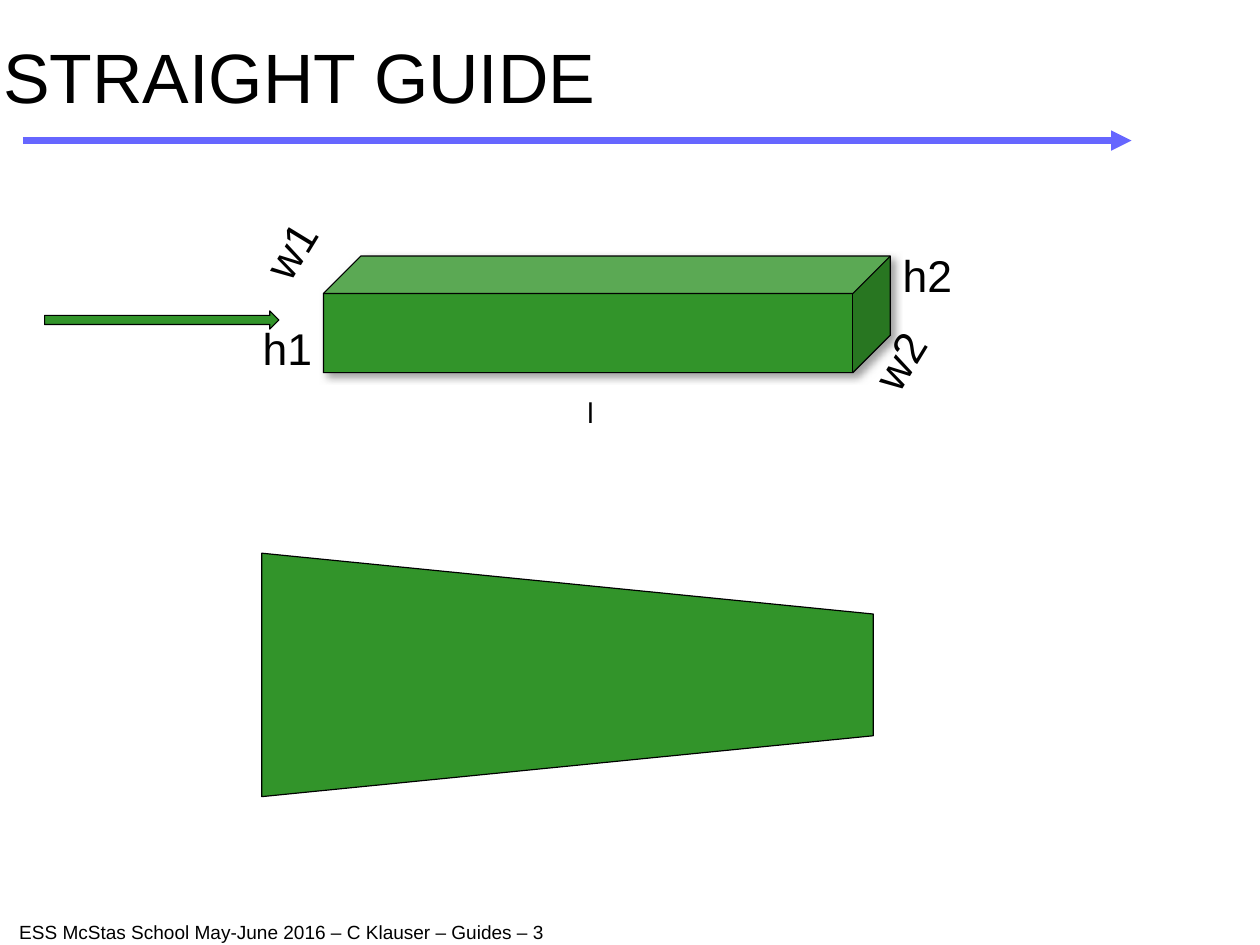
import pptx
import pptx.dml.color
import pptx.enum.shapes
import pptx.enum.text
import pptx.oxml
import pptx.oxml.ns
import pptx.util
from dataclasses import dataclass

Inches = pptx.util.Inches
Pt = pptx.util.Pt
Kind = pptx.enum.shapes.MSO_SHAPE
Anchor = pptx.enum.text.MSO_ANCHOR
DRAW = pptx.oxml.ns.nsdecls("a")


@dataclass(frozen=True)
class Theme:
    font: str = "Arial"
    ink: str = "000000"
    green: str = "32942A"
    rule: str = "6666FF"
    shade: str = "808080"
    title: int = 44
    label: int = 28
    small: int = 18
    foot: int = 12
    edge: float = 0.75
    bar: float = 4.31


THEME = Theme()


def color(code):
    return pptx.dml.color.RGBColor.from_string(code)


def add_text(slide, box, text, size, wrap=False, pad=(0.1, 0.05), space=0.93, turn=0):
    shape = slide.shapes.add_textbox(*map(Inches, box))
    shape.rotation = turn
    frame = shape.text_frame
    frame.word_wrap = wrap
    frame.margin_left = frame.margin_right = Inches(pad[0])
    frame.margin_top = frame.margin_bottom = Inches(pad[1])
    para = frame.paragraphs[0]
    para.text = text
    para.line_spacing = space
    para.font.name = THEME.font
    para.font.size = Pt(size)
    para.font.color.rgb = color(THEME.ink)
    return frame


def add_solid(slide, kind, box):
    """Add a green preset shape with a thin dark edge."""
    shape = slide.shapes.add_shape(kind, *map(Inches, box))
    shape.shadow.inherit = False
    shape.fill.solid()
    shape.fill.fore_color.rgb = color(THEME.green)
    shape.line.color.rgb = color(THEME.ink)
    shape.line.width = Pt(THEME.edge)
    return shape


def add_shade(shape):
    """Cast a soft shadow to the lower right."""
    effects = shape._element.spPr.find(pptx.oxml.ns.qn("a:effectLst"))
    effects.append(pptx.oxml.parse_xml(
        f'<a:outerShdw {DRAW} blurRad="{Pt(5)}" dist="{Pt(3)}" dir="2700000">'
        f'<a:srgbClr val="{THEME.shade}"><a:alpha val="75000"/></a:srgbClr>'
        '</a:outerShdw>'))


def add_header(slide, left, top, width, height):
    frame = add_text(slide, (left, top, width, height), "STRAIGHT GUIDE",
                     THEME.title, wrap=True, pad=(0, 0))
    frame.vertical_anchor = Anchor.MIDDLE
    level = Inches(top + height + 0.09)
    rule = slide.shapes.add_connector(
        pptx.enum.shapes.MSO_CONNECTOR.STRAIGHT,
        Inches(left + 0.17), level, Inches(left + width - 0.05), level)
    rule.line.color.rgb = color(THEME.rule)
    rule.line.width = Pt(THEME.bar)
    rule.line._get_or_add_ln().append(
        pptx.oxml.parse_xml(f'<a:tailEnd {DRAW} type="triangle"/>'))
    rule._element.spPr.append(pptx.oxml.parse_xml(f'<a:effectLst {DRAW}/>'))


def add_guide(slide, left, top, width, height):
    """Draw the straight guide, its beam and its dimension labels."""
    cube = add_solid(slide, Kind.CUBE, (left, top, width, height))
    cube.adjustments[0] = 0.321
    add_shade(cube)
    add_solid(slide, Kind.RIGHT_ARROW, (left - 2.44, top + 0.48, 2.05, 0.16))
    slant = 301.3
    labels = (
        ("h2", width + 0.01, -0.08, 0.64, 0),
        ("h1", -0.63, 0.56, 0.64, 0),
        ("w2", width - 0.25, 0.65, 0.72, slant),
        ("w1", -0.62, -0.32, 0.72, slant),
    )
    for text, across, down, wide, turn in labels:
        add_text(slide, (left + across, top + down, wide, 0.54), text,
                 THEME.label, turn=turn)
    add_text(slide, (left + 2.21, top + height + 0.17, 0.26, 0.39), "l", THEME.small)


def add_taper(slide, left, top, width, height):
    """Lay a trapezoid on its side so that it fills the box."""
    shift = (width - height) / 2
    taper = add_solid(slide, Kind.TRAPEZOID,
                      (left + shift, top - shift, height, width))
    taper.rotation = 90


def add_footer(slide, *box):
    add_text(slide, box, "ESS McStas School May-June 2016 – C Klauser – Guides – 3",
             THEME.foot, wrap=True, space=1.0)


def main():
    deck = pptx.Presentation()
    deck.slide_width = pptx.util.Cm(28)
    deck.slide_height = pptx.util.Cm(21)
    slide = deck.slides.add_slide(deck.slide_layouts[6])
    add_footer(slide, 0.07, 8, 8, 0.27)
    add_header(slide, 0.03, 0.27, 9.92, 0.87)
    add_guide(slide, 2.83, 2.24, 4.96, 1.02)
    add_taper(slide, 2.29, 4.84, 5.35, 2.13)
    deck.save("out.pptx")


if __name__ == "__main__":
    main()
